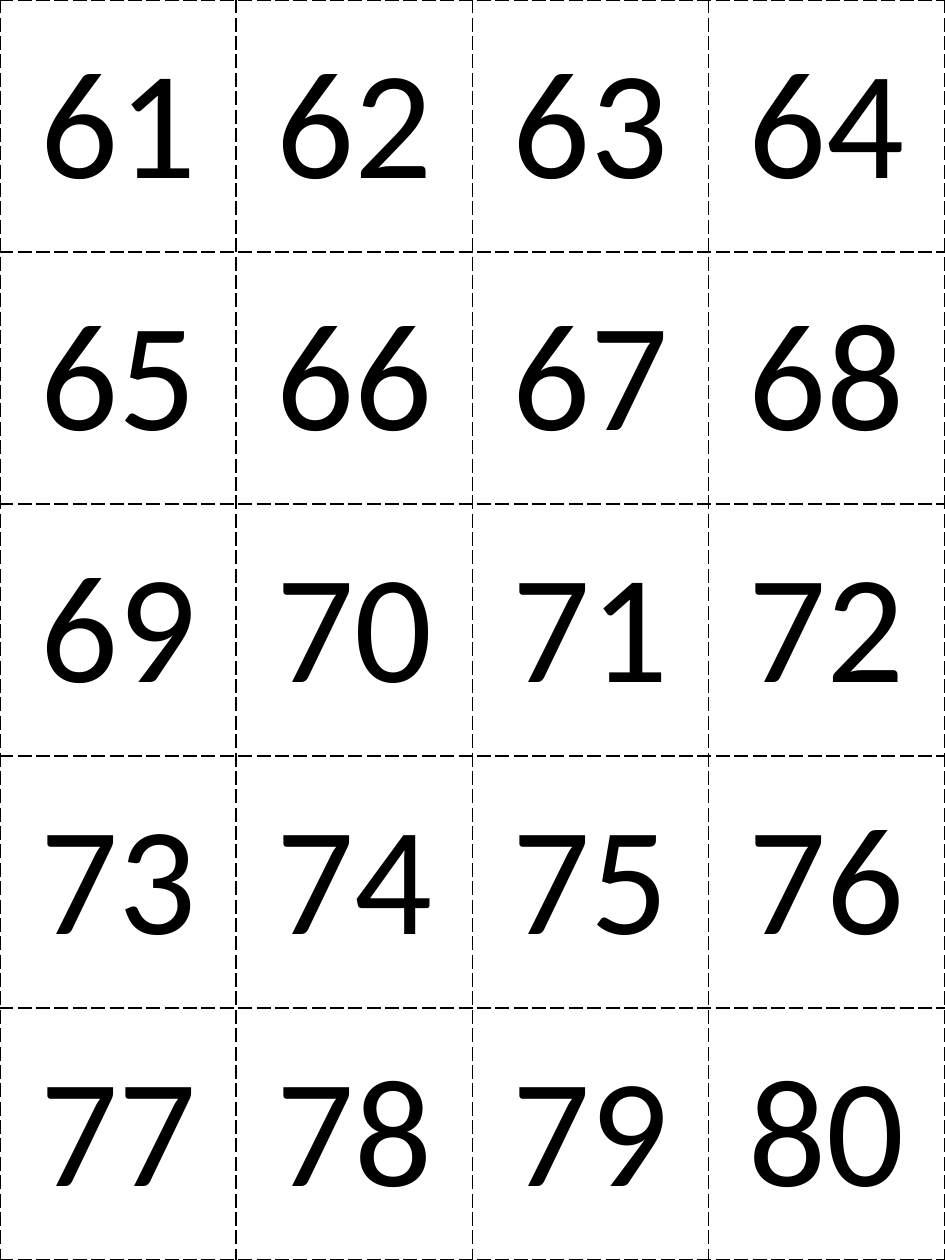
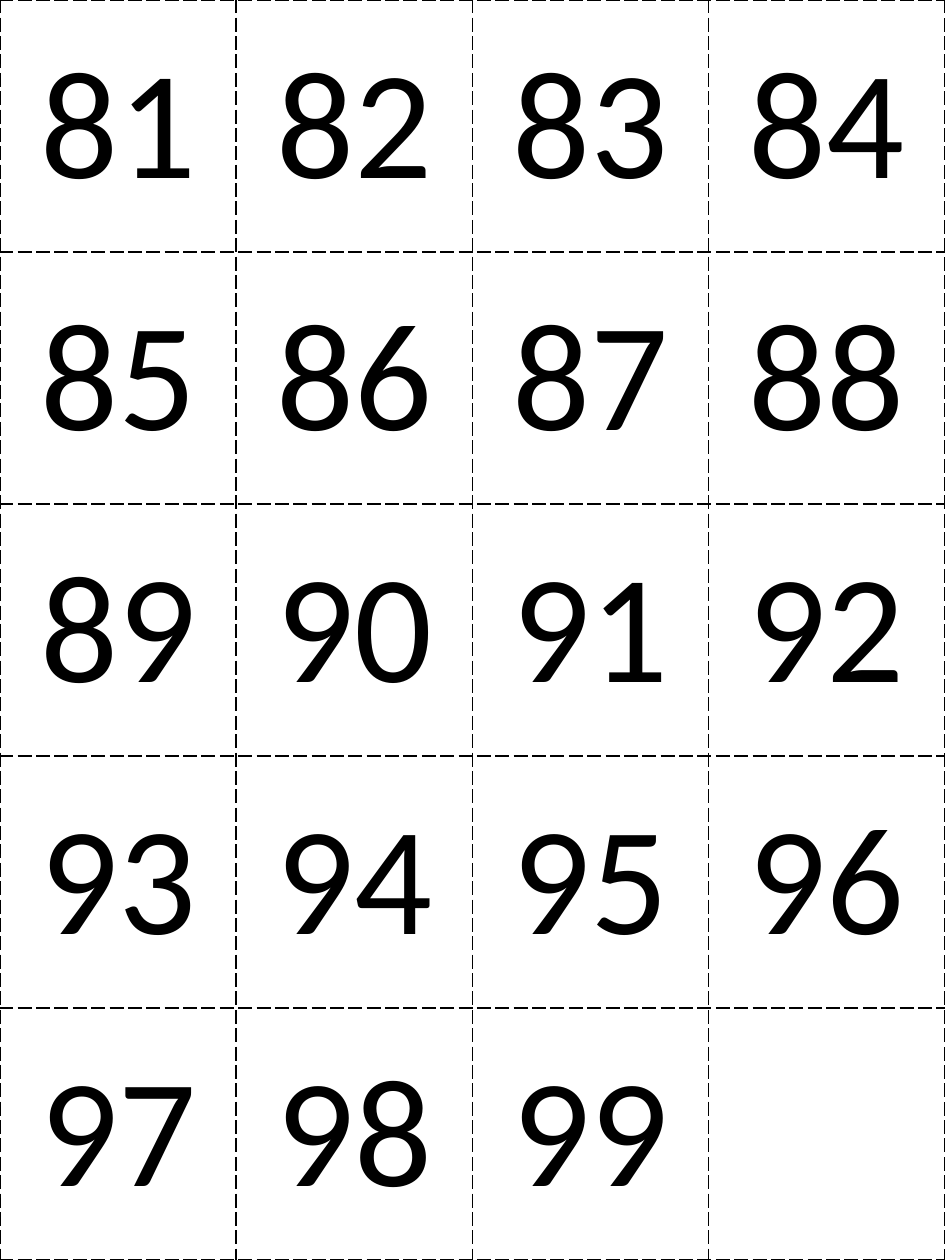
from dataclasses import dataclass

from lxml.etree import SubElement
from pptx import Presentation
from pptx.dml.color import RGBColor
from pptx.enum.text import MSO_ANCHOR, PP_ALIGN
from pptx.oxml.ns import qn
from pptx.slide import Slide
from pptx.table import _Cell as Cell
from pptx.util import Inches, Pt

PAGE_WIDTH, PAGE_HEIGHT = Inches(7.5), Inches(10)
ROWS, COLUMNS = 5, 4
INK = RGBColor(0x00, 0x00, 0x00)
PAPER = RGBColor(0xFF, 0xFF, 0xFF)
FONT = "Calibri"
NUMBER_SIZE = Pt(88)
CUT_LINE_WIDTH = Pt(1)


@dataclass(frozen=True)
class CardSheet:
    first: int
    last: int


SHEETS = [CardSheet(61, 80), CardSheet(81, 99)]


def add_cut_lines(cell: Cell) -> None:
    """Give the cell a dashed border on all four sides."""
    properties = cell._tc.get_or_add_tcPr()
    for position, side in enumerate(("lnL", "lnR", "lnT", "lnB")):
        line = SubElement(properties, qn(f"a:{side}"), w=str(CUT_LINE_WIDTH))
        fill = SubElement(line, qn("a:solidFill"))
        SubElement(fill, qn("a:srgbClr"), val=str(INK))
        SubElement(line, qn("a:prstDash"), val="lgDash")
        # Borders must come before the cell fill.
        properties.insert(position, line)


def write_number(cell: Cell, number: int) -> None:
    para = cell.text_frame.paragraphs[0]
    para.alignment = PP_ALIGN.CENTER
    span = para.add_run()
    span.text = str(number)
    span.font.name = FONT
    span.font.size = NUMBER_SIZE
    span.font.color.rgb = INK


def add_cards(page: Slide, sheet: CardSheet) -> None:
    """Fill the page with a grid of cards, numbered row by row."""
    table = page.shapes.add_table(
        ROWS, COLUMNS, Inches(0), Inches(0), PAGE_WIDTH, PAGE_HEIGHT
    ).table
    table.first_row = False
    table.horz_banding = False
    for number, cell in enumerate(table.iter_cells(), start=sheet.first):
        cell.vertical_anchor = MSO_ANCHOR.MIDDLE
        cell.fill.solid()
        cell.fill.fore_color.rgb = PAPER
        add_cut_lines(cell)
        if number <= sheet.last:
            write_number(cell, number)


def main() -> None:
    deck = Presentation()
    deck.slide_width, deck.slide_height = PAGE_WIDTH, PAGE_HEIGHT
    blank_layout = deck.slide_layouts[6]
    for sheet in SHEETS:
        add_cards(deck.slides.add_slide(blank_layout), sheet)
    deck.save("out.pptx")


if __name__ == "__main__":
    main()
